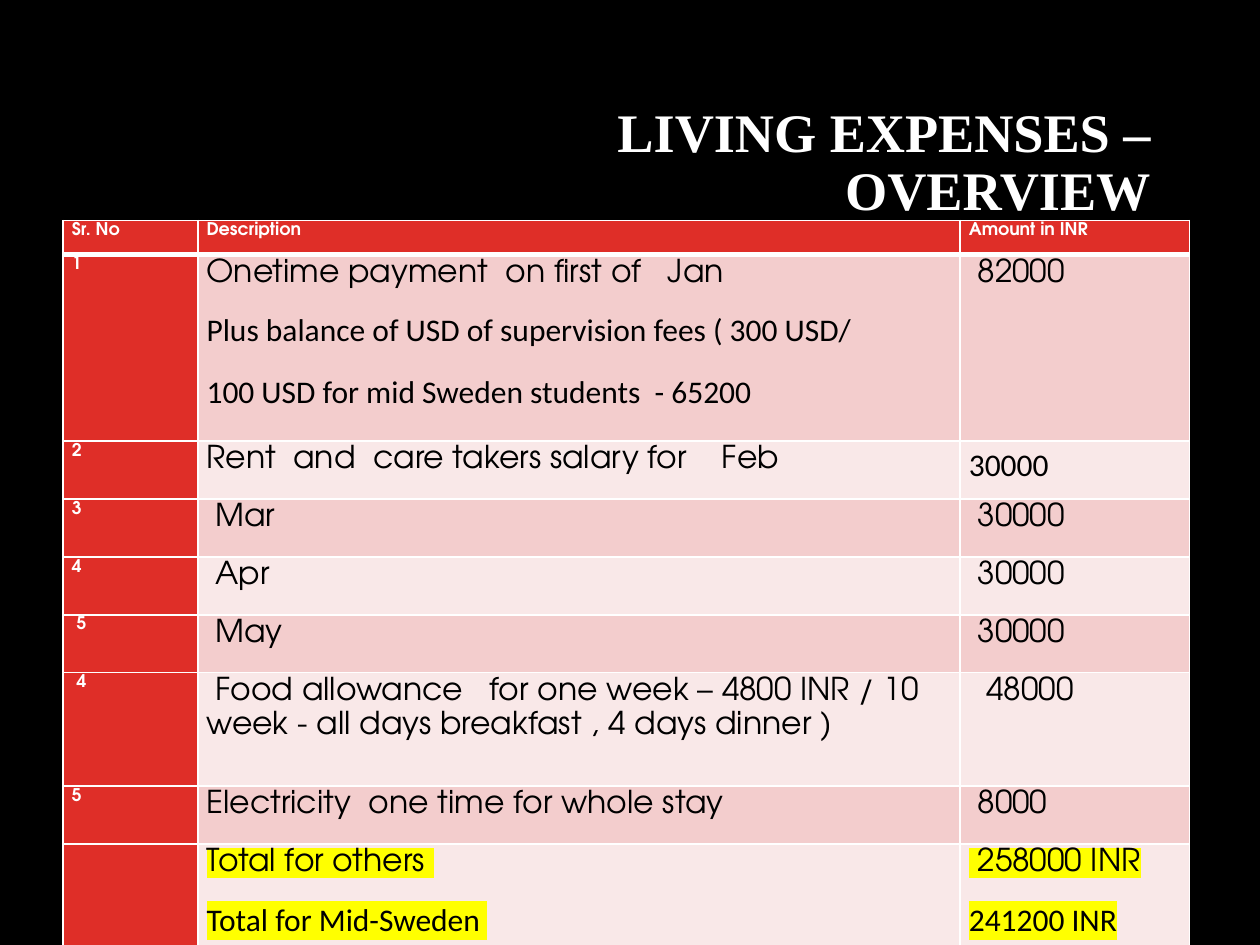
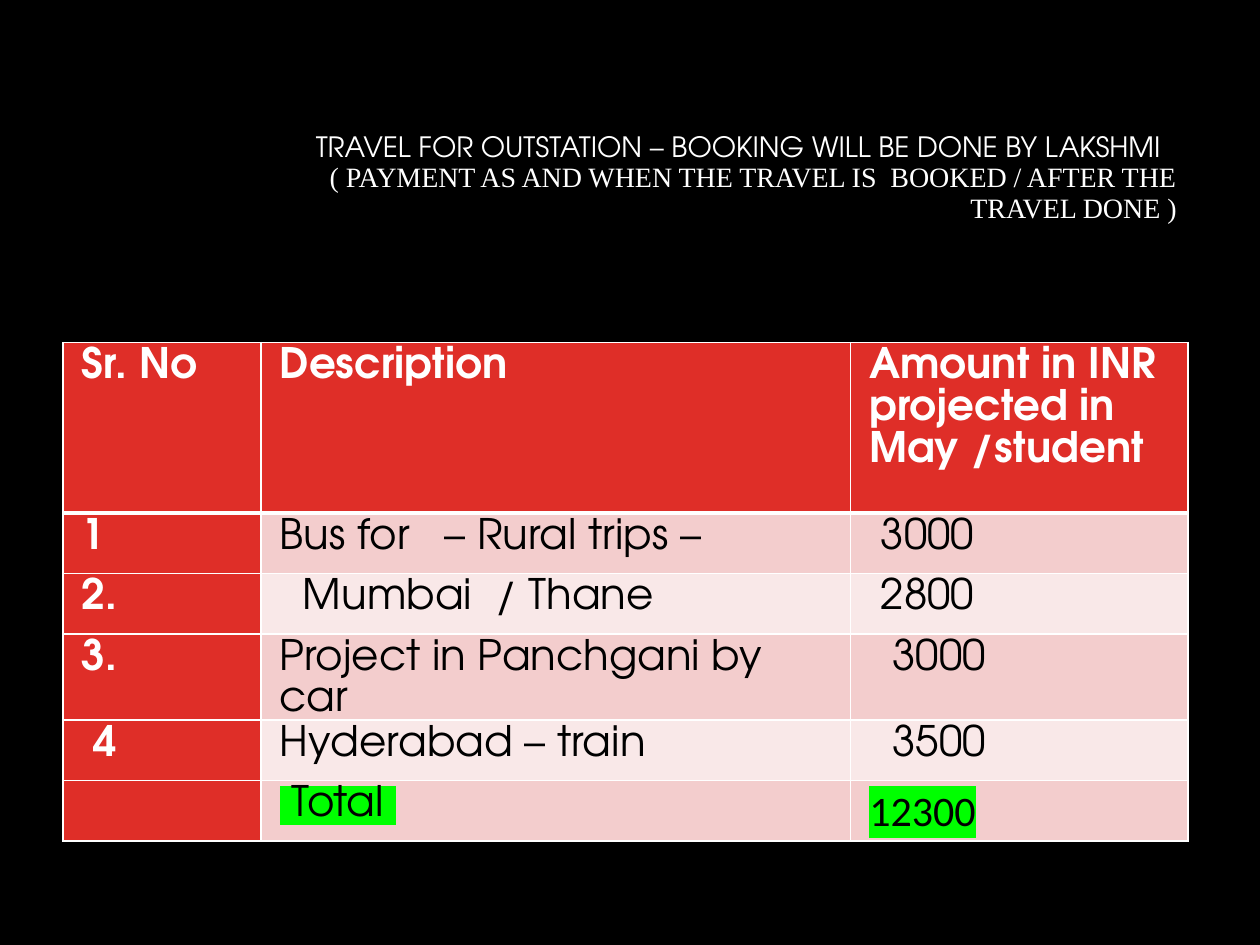
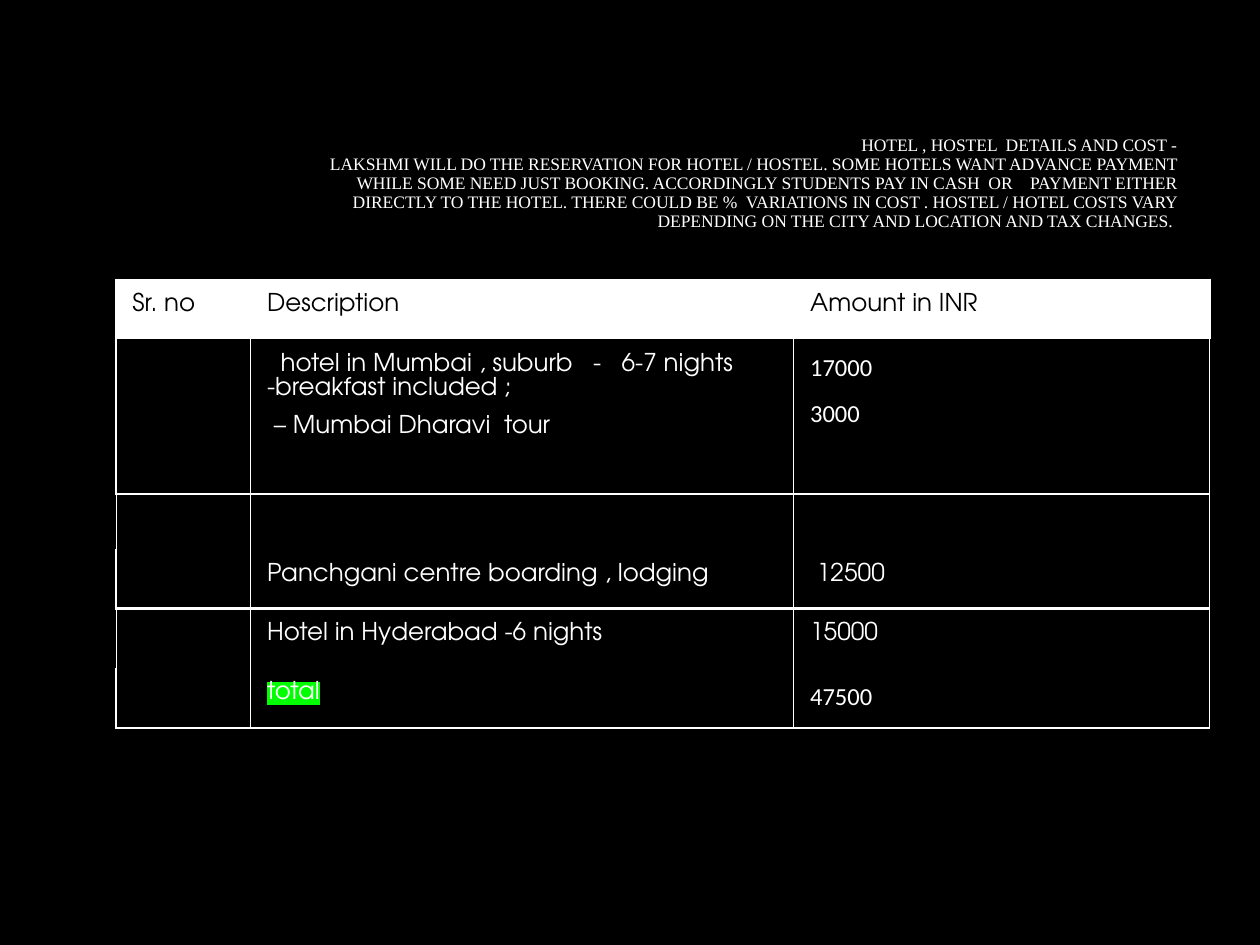
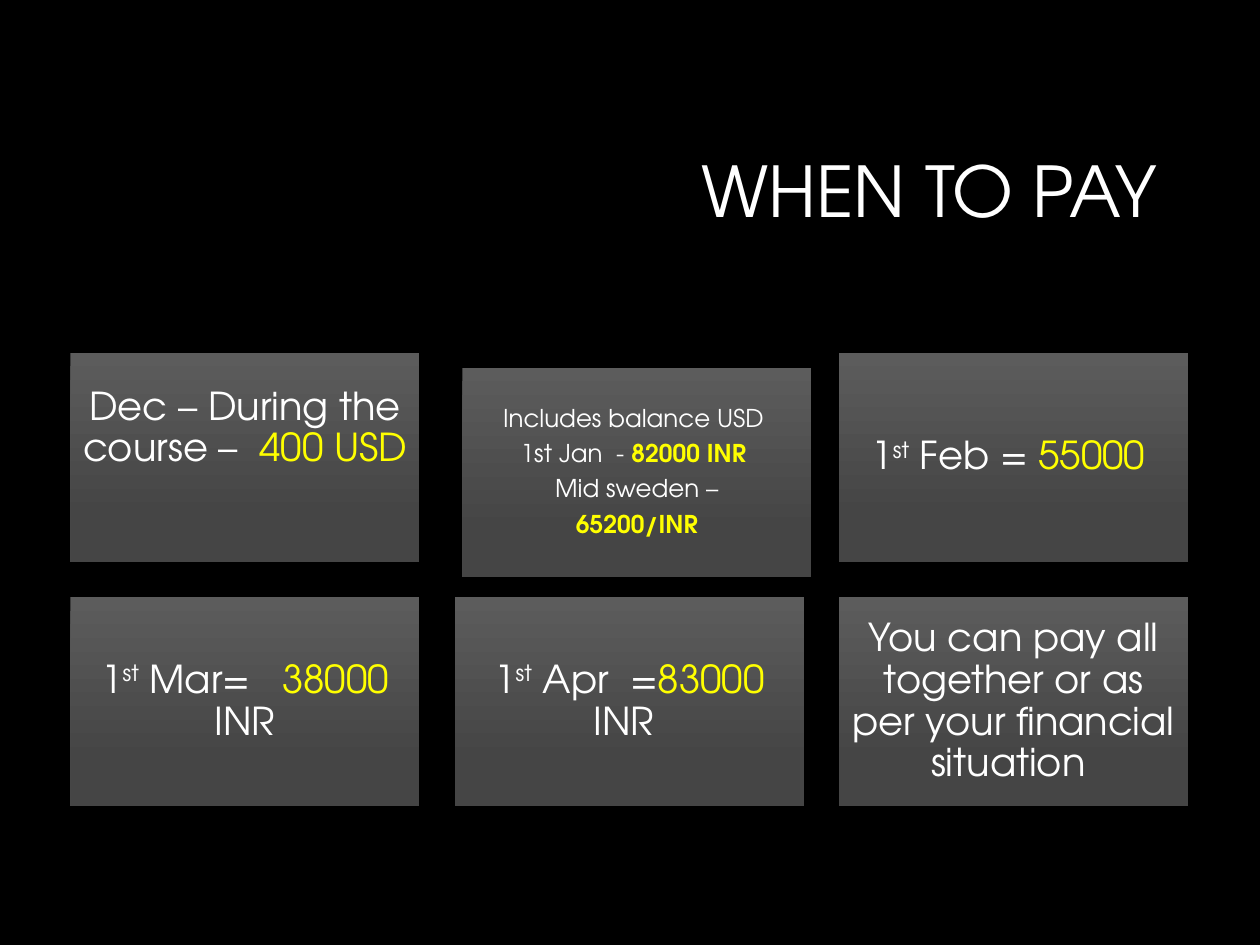
from dataclasses import dataclass
from typing import NamedTuple, Optional

from lxml import etree
from pptx import Presentation
from pptx.dml.color import RGBColor
from pptx.enum.shapes import MSO_SHAPE as Shape
from pptx.enum.text import MSO_ANCHOR as Anchor, MSO_AUTO_SIZE as AutoSize, PP_ALIGN as Align
from pptx.oxml.ns import qn
from pptx.util import Inches, Pt


@dataclass(frozen=True)
class Theme:
    black: str = "000000"
    white: str = "FFFFFF"
    red: str = "DF2E28"
    pink: str = "F3CDCD"
    pale_pink: str = "F9E8E8"
    yellow: str = "FFFF00"
    green: str = "00FF00"
    card_top: str = "5C5C5C"
    card_bottom: str = "454545"
    main: str = "TeX Gyre Adventor"
    plain: str = "Calibri"
    serif: str = "Times New Roman"
    card_size: int = 22
    small_card_size: int = 14


THEME = Theme()


class Piece(NamedTuple):
    """A stretch of text; unset fields follow the surrounding style."""
    text: str
    color: Optional[str] = None
    bold: Optional[bool] = None
    font: Optional[str] = None
    highlight: Optional[str] = None
    raised: bool = False


class TextStyle(NamedTuple):
    size: float
    color: str = THEME.white
    bold: bool = False
    font: str = THEME.main
    align: Align = Align.LEFT
    spacing: float = 0.9
    after: float = 0


class CellStyle(NamedTuple):
    fill: str
    color: str
    bold: bool
    borders: tuple  # widths in points: left, right, top, bottom


class TableLook(NamedTuple):
    label_size: int
    body_size: int
    spacing: float
    after: int
    margins: tuple  # left, top, right, bottom
    cell_style: callable


def plain(text, highlight=None):
    return Piece(text, font=THEME.plain, highlight=highlight)


def amount(text, bold=None):
    return Piece(text, color=THEME.yellow, bold=bold)


def first_of_month(*rest):
    return [[Piece("1"), Piece("st", raised=True), *rest]]


def as_paragraphs(content):
    """Turn a string, a piece or a list of paragraphs into lists of pieces."""
    if not isinstance(content, list):
        content = [content]
    paragraphs = []
    for part in content:
        pieces = part if isinstance(part, list) else [part]
        paragraphs.append([Piece(p) if isinstance(p, str) else p for p in pieces])
    return paragraphs


def red_cell(row, col):
    label = row == 0 or col == 0
    fill = THEME.red if label else (THEME.pale_pink, THEME.pink)[row % 2]
    borders = (1, 1, 3 if row == 1 else 1, 3 if row == 0 else 1)
    return CellStyle(fill, THEME.white if label else THEME.black, label, borders)


def outlined_cell(row, col):
    """White header above black rows, which are ruled off in pairs."""
    if row == 0:
        return CellStyle(THEME.white, THEME.black, False, (1.5, 1.5, 1.5, 0))
    opens_pair = row % 2 == 0
    left = 1.5 if col == 0 and not opens_pair else 0.5
    borders = (left, 0.5, 1.5 if opens_pair else 0, 0 if opens_pair else 1.5)
    return CellStyle(THEME.black, THEME.white, False, borders)


class Deck:
    def __init__(self, theme):
        self.theme = theme
        self.prs = Presentation()
        self.prs.slide_width, self.prs.slide_height = Inches(10), Inches(7.5)
        background = self.prs.slide_master.background.fill
        background.solid()
        background.fore_color.rgb = RGBColor.from_string(theme.black)
        self.slide = None

    def new_slide(self):
        self.slide = self.prs.slides.add_slide(self.prs.slide_layouts[5])

    def fill_text(self, frame, content, style):
        for number, pieces in enumerate(as_paragraphs(content)):
            paragraph = frame.add_paragraph() if number else frame.paragraphs[0]
            paragraph.alignment = style.align
            paragraph.line_spacing = style.spacing
            paragraph.space_before = Pt(0)
            paragraph.space_after = Pt(style.after)
            for piece in pieces:
                run = paragraph.add_run()
                run.text = piece.text
                self.format_run(run, piece, style)

    def format_run(self, run, piece, style):
        font = run.font
        font.size = Pt(style.size)
        font.name = piece.font or style.font
        font.bold = style.bold if piece.bold is None else piece.bold
        font.color.rgb = RGBColor.from_string(piece.color or style.color)
        properties = run._r.get_or_add_rPr()
        if piece.raised:
            properties.set("baseline", "30000")
        if piece.highlight:
            mark = etree.Element(qn("a:highlight"))
            etree.SubElement(mark, qn("a:srgbClr"), val=piece.highlight)
            properties.find(qn("a:latin")).addprevious(mark)

    def title(self, content, size, font, bold=False, right=0.1, bottom=0.05):
        heading = self.slide.shapes.title
        heading.left, heading.top = Inches(2.38), Inches(0.84)
        heading.width, heading.height = Inches(7.06), Inches(1.41)
        frame = heading.text_frame
        frame.word_wrap = True
        frame.auto_size = AutoSize.NONE
        frame.vertical_anchor = Anchor.MIDDLE
        frame.margin_right, frame.margin_bottom = Inches(right), Inches(bottom)
        self.fill_text(frame, content, TextStyle(size, font=font, bold=bold, align=Align.RIGHT))

    def border(self, cell, widths):
        properties = cell._tc.get_or_add_tcPr()
        for place, (side, width) in enumerate(zip("LRTB", widths)):
            line = etree.Element(qn(f"a:ln{side}"), w=str(int(Pt(width))))
            if width:
                fill = etree.SubElement(line, qn("a:solidFill"))
                etree.SubElement(fill, qn("a:srgbClr"), val=self.theme.white)
            else:
                etree.SubElement(line, qn("a:noFill"))
            properties.insert(place, line)

    def table(self, left, top, widths, heights, rows, look):
        table = self.slide.shapes.add_table(
            len(rows), len(widths), Inches(left), Inches(top),
            Inches(sum(widths)), Inches(sum(heights))).table
        table.first_row = table.horz_banding = False
        for column, width in zip(table.columns, widths):
            column.width = Inches(width)
        for r, (row, height) in enumerate(zip(rows, heights)):
            table.rows[r].height = Inches(height)
            for c, content in enumerate(row):
                style = look.cell_style(r, c)
                self.cell(table.cell(r, c), content, style, look, r == 0 or c == 0)

    def cell(self, cell, content, style, look, is_label):
        cell.fill.solid()
        cell.fill.fore_color.rgb = RGBColor.from_string(style.fill)
        self.border(cell, style.borders)
        if not content:
            return
        (cell.margin_left, cell.margin_top,
         cell.margin_right, cell.margin_bottom) = map(Inches, look.margins)
        size = look.label_size if is_label else look.body_size
        self.fill_text(cell.text_frame, content, TextStyle(
            size, style.color, style.bold, spacing=look.spacing, after=look.after))

    def card(self, left, top, content, size, inset=0.09, bottom=None):
        card = self.slide.shapes.add_shape(
            Shape.RECTANGLE, Inches(left), Inches(top), Inches(2.77), Inches(1.66))
        card.shadow.inherit = False
        card.line.fill.background()
        card.fill.gradient()
        card.fill.gradient_angle = 270
        shades = ((0, self.theme.card_top), (0.78, self.theme.card_bottom))
        for stop, (position, color) in zip(card.fill.gradient_stops, shades):
            stop.position = position
            stop.color.rgb = RGBColor.from_string(color)
        frame = card.text_frame
        frame.word_wrap = True
        frame.vertical_anchor = Anchor.MIDDLE
        frame.margin_left = frame.margin_right = frame.margin_top = Inches(inset)
        frame.margin_bottom = Inches(bottom or inset)
        self.fill_text(frame, content, TextStyle(
            size, align=Align.CENTER, after=round(0.35 * size)))


def living_expenses(deck):
    deck.new_slide()
    deck.title("LIVING EXPENSES –OVERVIEW", 31, THEME.serif, bold=True, right=0.31, bottom=0.54)
    yellow = THEME.yellow
    rows = [
        ("Sr. No", "Description", "Amount in INR"),
        ("1", ["Onetime payment  on first of   Jan",
               plain("Plus balance of USD of supervision fees ( 300 USD/"),
               plain("100 USD for mid Sweden students  - 65200")], " 82000"),
        ("2", "Rent  and  care takers salary for    Feb", plain("30000")),
        ("3", " Mar", " 30000"),
        ("4", " Apr", " 30000"),
        (" 5", " May", " 30000"),
        (" 4", " Food allowance   for one week – 4800 INR / 10 week"
               " - all days breakfast , 4 days dinner )", "  48000"),
        ("5", "Electricity  one time for whole stay", " 8000"),
        ("", [Piece("Total for others ", highlight=yellow),
              plain("Total for Mid-Sweden ", yellow)],
         [Piece(" 258000 INR", highlight=yellow), plain("241200 INR", yellow)]),
    ]
    look = TableLook(10, 18, 1.15, 10, (0.07, 0, 0.07, 0), red_cell)
    heights = [0.27, 1.48] + [0.46] * 4 + [0.9, 0.46, 0.93]
    deck.table(0.5, 1.75, (1.07, 6.05, 1.82), heights, rows, look)


def outstation_travel(deck):
    deck.new_slide()
    deck.title(
        ["TRAVEL FOR OUTSTATION – BOOKING WILL BE DONE BY LAKSHMI  ",
         Piece("( PAYMENT AS AND WHEN THE TRAVEL IS  BOOKED / AFTER THE TRAVEL DONE )",
               font=THEME.serif)], 16, THEME.main, bottom=0.3)
    rows = [
        ("Sr. No", "Description", "Amount in INR projected in May /student"),
        ("1", "Bus for   – Rural trips –", " 3000"),
        ("2.", "  Mumbai  / Thane", " 2800"),
        ("3.", "Project in Panchgani by car", "  3000"),
        (" 4", "Hyderabad – train", "  3500"),
        ("", Piece(" Total ", highlight=THEME.green), plain("12300", THEME.green)),
    ]
    look = TableLook(24, 24, 1.07, 8, (0.15, 0.02, 0.15, 0), red_cell)
    heights = [1.35, 0.48, 0.48, 0.68, 0.48, 0.48]
    deck.table(0.5, 2.72, (1.57, 4.68, 2.68), heights, rows, look)


def hotel_costs(deck):
    deck.new_slide()
    deck.title(
        ["HOTEL , HOSTEL  DETAILS AND COST -",
         "LAKSHMI WILL DO THE RESERVATION FOR HOTEL / HOSTEL. SOME HOTELS WANT ADVANCE "
         "PAYMENT WHILE SOME NEED JUST BOOKING. ACCORDINGLY STUDENTS PAY IN CASH  OR    "
         "PAYMENT EITHER DIRECTLY TO THE HOTEL. THERE COULD BE %  VARIATIONS IN COST . "
         "HOSTEL / HOTEL COSTS VARY DEPENDING ON THE CITY AND LOCATION AND TAX CHANGES. "],
        10, THEME.serif, bottom=0.22)
    rows = [
        ("Sr. no", "Description", "Amount in INR"),
        ("", ["  hotel in Mumbai , suburb   -   6-7 nights -breakfast included ;",
              " – Mumbai Dharavi  tour"], [plain("17000"), plain("3000")]),
        ("", "", ""),
        ("", "Panchgani centre boarding , lodging", " 12500"),
        ("", "Hotel in Hyderabad -6 nights", "15000"),
        ("", Piece("total", highlight=THEME.green), plain("47500")),
    ]
    look = TableLook(14, 14, 1.07, 8, (0.13, 0.1, 0.06, 0.1), outlined_cell)
    heights = [0.47, 1.23, 0.44, 0.47, 0.47, 0.48]
    deck.table(0.92, 2.22, (1.07, 4.31, 3.3), heights, rows, look)


def when_to_pay(deck):
    deck.new_slide()
    deck.title("WHEN TO PAY ", 40, THEME.main)
    columns = [0.56 + 3.05 * i for i in range(3)]
    upper, lower = 2.8, 4.74
    size = THEME.card_size
    deck.card(columns[0], upper, [["Dec – During the course –  ", amount("400 USD")]],
              size, bottom=0.55)
    january = ["Includes balance USD ",
               ["1st Jan  - ", amount("82000 INR ", bold=True)],
               "Mid sweden –",
               amount("65200/INR", bold=True)]
    deck.card(columns[1] + 0.06, upper + 0.12, january, THEME.small_card_size, inset=0.03)
    others = [
        (columns[2], upper, first_of_month(" Feb = ", amount("55000 "))),
        (columns[0], lower, first_of_month(" Mar=   ", amount("38000"), " INR")),
        (columns[1], lower, first_of_month(" Apr  =", amount("83000 "), "INR ")),
        (columns[2], lower, "You can pay all together or as per your financial situation "),
    ]
    for left, top, content in others:
        deck.card(left, top, content, size)


def main():
    deck = Deck(THEME)
    for build in (living_expenses, outstation_travel, hotel_costs, when_to_pay):
        build(deck)
    deck.prs.save("out.pptx")


if __name__ == "__main__":
    main()
